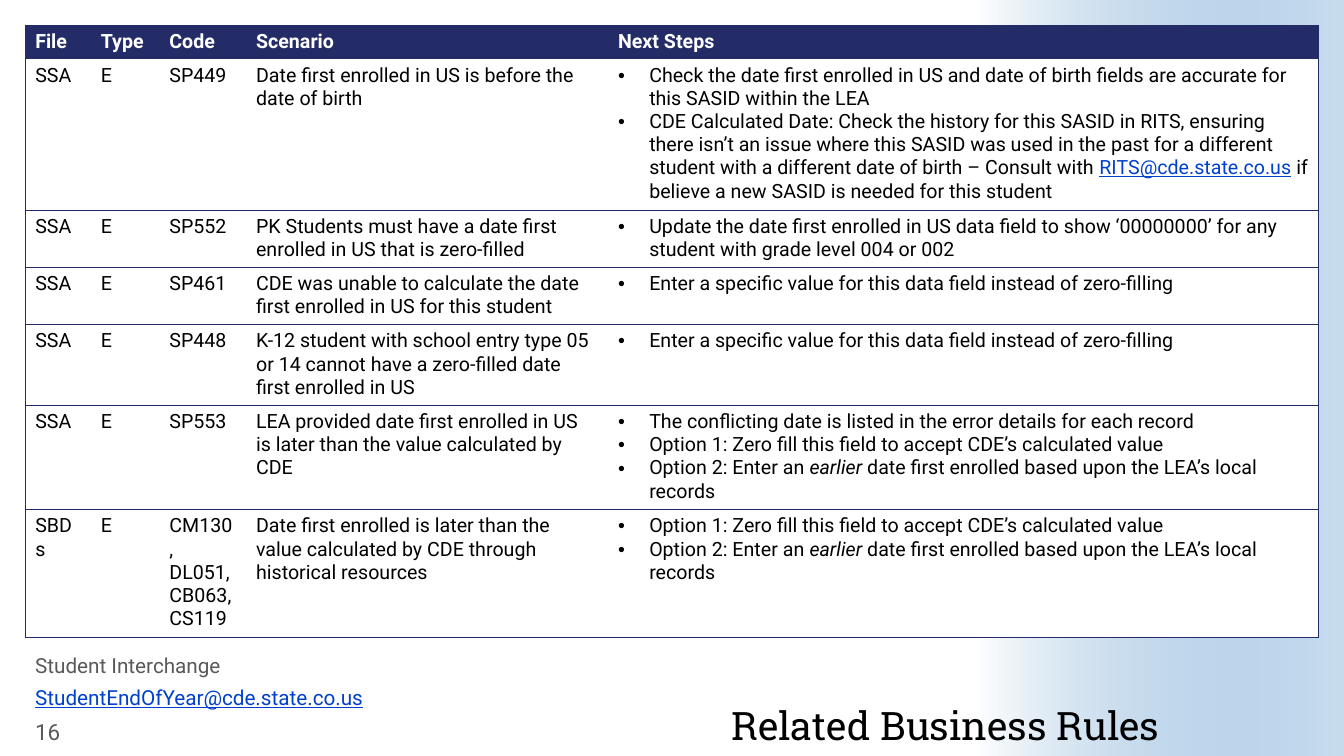
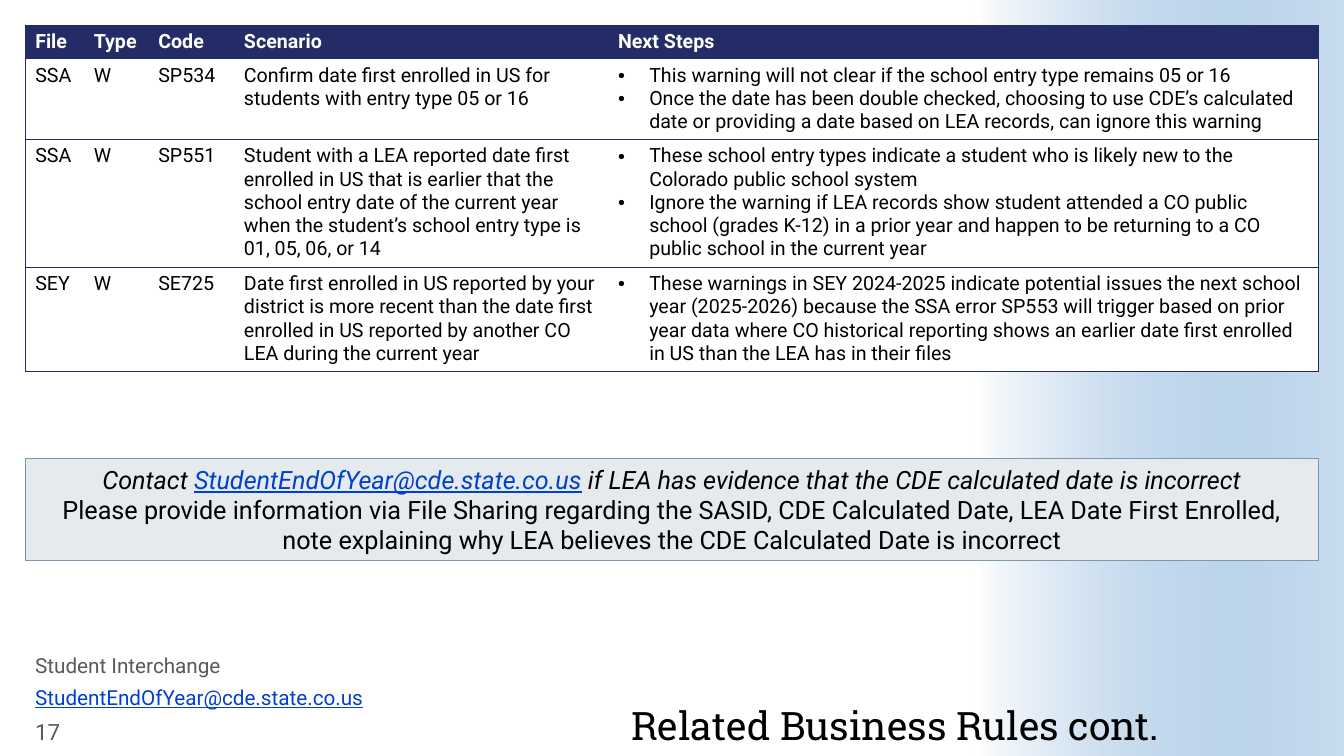
from lxml import etree
from pptx import Presentation
from pptx import util as u
from pptx.dml import color
from pptx.enum import shapes, text
from pptx.oxml import ns

GRID = 0.25
WIDTH, HEIGHT = 53.32, 30
MARGIN = 1
CONTENT = WIDTH - 2 * MARGIN
LINE, PADDING, HEADER = 0.92, 0.4, 1.32

NAVY, WHITE, BLACK, GREY = "232C67", "FFFFFF", "000000", "595959"
LINK_BLUE, BAND_BLUE = "0040CE", "488BC9"
CALLOUT_FILL, CALLOUT_LINE = "E5EAEE", "7C98AC"
LINK = {"hue": LINK_BLUE, "underline": True}
ITALIC = {"italic": True}
EMAIL = "StudentEndOfYear@cde.state.co.us"

HEADINGS = ["File", "Type", "Code", "Scenario", "Next Steps"]
SPECIFIC_VALUE = ["Enter a specific value for this data field instead of zero-filling"]
OPTIONS = [
    ["Option 1: Zero fill this field to accept CDE’s calculated value"],
    ["Option 2: Enter an ", ("earlier", ITALIC),
     " date first enrolled based upon the LEA’s local records"],
]
ERRORS = [
    (6, "SSA", "E", "SP449", "Date first enrolled in US is before the date of birth", [
        ["Check the date first enrolled in US and date of birth fields are accurate "
         "for this SASID within the LEA"],
        ["CDE Calculated Date: Check the history for this SASID in RITS, ensuring there "
         "isn’t an issue where this SASID was used in the past for a different student "
         "with a different date of birth – Consult with ",
         ("RITS@cde.state.co.us", LINK),
         " if believe a new SASID is needed for this student"]]),
    (2, "SSA", "E", "SP552",
     "PK Students must have a date first enrolled in US that is zero-filled", [
         ["Update the date first enrolled in US data field to show ‘00000000’ for any "
          "student with grade level 004 or 002"]]),
    (2, "SSA", "E", "SP461",
     "CDE was unable to calculate the date first enrolled in US for this student",
     [SPECIFIC_VALUE]),
    (3, "SSA", "E", "SP448",
     "K-12 student with school entry type 05 or 14 cannot have a zero-filled date first "
     "enrolled in US", [SPECIFIC_VALUE]),
    (4, "SSA", "E", "SP553",
     "LEA provided date first enrolled in US is later than the value calculated by CDE",
     [["The conflicting date is listed in the error details for each record"], *OPTIONS]),
    (4, "SBDs", "E", "CM130, DL051, CB063, CS119",
     "Date first enrolled is later than the value calculated by CDE through historical "
     "resources", OPTIONS),
]
WARNINGS = [
    (3, "SSA", "W", "SP534",
     "Confirm date first enrolled in US for students with entry type 05 or 16", [
         ["This warning will not clear if the school entry type remains 05 or 16"],
         ["Once the date has been double checked, choosing to use CDE’s calculated date "
          "or providing a date based on LEA records, can ignore this warning"]]),
    (5, "SSA", "W", "SP551",
     "Student with a LEA reported date first enrolled in US that is earlier that the "
     "school entry date of the current year when the student’s school entry type is 01, "
     "05, 06, or 14", [
         ["These school entry types indicate a student who is likely new to the Colorado "
          "public school system"],
         ["Ignore the warning if LEA records show student attended a CO public school "
          "(grades K-12) in a prior year and happen to be returning to a CO public school "
          "in the current year"]]),
    (4, "SEY", "W", "SE725",
     "Date first enrolled in US reported by your district is more recent than the date "
     "first enrolled in US reported by another CO LEA during the current year", [
         ["These warnings in SEY 2024-2025 indicate potential issues the next school year "
          "(2025-2026) because the SSA error SP553 will trigger based on prior year data "
          "where CO historical reporting shows an earlier date first enrolled in US than "
          "the LEA has in their files"]]),
]
CALLOUT = [
    [("Contact ", ITALIC), (EMAIL, {**LINK, **ITALIC}),
     (" if LEA has evidence that the CDE calculated date is incorrect", ITALIC)],
    ["Please provide information via File Sharing regarding the SASID, CDE Calculated "
     "Date, LEA Date First Enrolled, note explaining why LEA believes the CDE Calculated "
     "Date is incorrect"],
]


def rgb(value):
    """Turn a hex string into a colour."""
    return color.RGBColor.from_string(value)


def grid(*cells):
    """Turn grid cells into lengths."""
    return [u.Inches(cell * GRID) for cell in cells]


def add_runs(paragraph, items, size, hue=BLACK, font="Roboto", bold=False):
    """Add plain strings or (text, style) pairs as runs."""
    for item in items:
        words, style = (item, {}) if isinstance(item, str) else item
        run = paragraph.add_run()
        run.text = words
        run.font.name, run.font.size, run.font.bold = font, u.Pt(size), bold
        run.font.italic = style.get("italic", False)
        run.font.underline = style.get("underline", False)
        run.font.color.rgb = rgb(style.get("hue", hue))


def add_paragraphs(frame, paragraphs, size, bullet=False, align=None, spacing=None, **style):
    """Fill a text frame with paragraphs."""
    for index, items in enumerate(paragraphs):
        paragraph = frame.add_paragraph() if index else frame.paragraphs[0]
        paragraph.alignment, paragraph.line_spacing = align, spacing
        if bullet:
            properties = paragraph._p.get_or_add_pPr()
            indent = u.Inches(0.31)
            properties.set("marL", str(indent))
            properties.set("indent", str(-indent))
            etree.SubElement(properties, ns.qn("a:buFont"), typeface="Arial")
            etree.SubElement(properties, ns.qn("a:buChar"), char="•")
        add_runs(paragraph, items, size, **style)


def add_label(slide, place, items, size, anchor=text.MSO_ANCHOR.TOP, inset=None, **style):
    """Add a one-paragraph text box."""
    frame = slide.shapes.add_textbox(*grid(*place)).text_frame
    frame.word_wrap, frame.vertical_anchor = True, anchor
    if inset is not None:
        frame.margin_left = frame.margin_right = inset
        frame.margin_top = frame.margin_bottom = inset
    add_paragraphs(frame, [items], size, **style)


def add_rectangle(slide, *place):
    """Add a rectangle without shadow."""
    shape = slide.shapes.add_shape(shapes.MSO_SHAPE.RECTANGLE, *grid(*place))
    shape.shadow.inherit = False
    return shape


def add_side_band(slide):
    """Add the fading blue band at the right."""
    left = 38.68
    band = add_rectangle(slide, left, 0, WIDTH - left, HEIGHT)
    band.line.fill.background()
    band.fill.gradient()
    band.fill.gradient_angle = 0
    stops = band.fill.gradient_stops
    for stop, position, hue in zip(stops, (0, 1), (WHITE, BAND_BLUE)):
        stop.position, stop.color.rgb = position, rgb(hue)
    end = band.fill._fill._gradFill.findall(".//" + ns.qn("a:srgbClr"))[-1]
    etree.SubElement(end, ns.qn("a:alpha"), val="30000")


def set_borders(cell, sides):
    """Draw the named sides of a cell and clear the others."""
    properties = cell._tc.get_or_add_tcPr()
    for side in "LRTB":
        line = etree.SubElement(properties, ns.qn("a:ln" + side), w=str(u.Pt(1)))
        if side in sides:
            fill = etree.SubElement(line, ns.qn("a:solidFill"))
            etree.SubElement(fill, ns.qn("a:srgbClr"), val=NAVY)
        else:
            etree.SubElement(line, ns.qn("a:noFill"))


def add_rules_table(slide, columns, rules):
    """Add the table of business rules."""
    heights = [HEADER] + [PADDING + LINE * rule[0] for rule in rules]
    table = slide.shapes.add_table(
        len(heights), len(columns),
        *grid(MARGIN, MARGIN, CONTENT, sum(heights))).table
    table.first_row = table.horz_banding = False
    for column, width in zip(table.columns, grid(*columns)):
        column.width = width
    for row, height in zip(table.rows, grid(*heights)):
        row.height = height
    last = len(columns) - 1
    for row, values in enumerate([HEADINGS] + [rule[1:] for rule in rules]):
        for column, value in enumerate(values):
            cell = table.cell(row, column)
            set_borders(cell, "TB" + "L" * (column == 0) + "R" * (column == last))
            cell.fill.solid()
            cell.fill.fore_color.rgb = rgb(WHITE if row else NAVY)
            bullet = not isinstance(value, str)
            add_paragraphs(cell.text_frame, value if bullet else [[value]], 14, bullet,
                           hue=BLACK if row else WHITE, bold=not row)


def add_callout(slide):
    """Add the contact box."""
    box = add_rectangle(slide, MARGIN, 18.2, CONTENT, 4.04)
    box.fill.solid()
    box.fill.fore_color.rgb = rgb(CALLOUT_FILL)
    box.line.color.rgb = rgb(CALLOUT_LINE)
    box.line.width = u.Pt(0.5)
    box.text_frame.word_wrap = True
    add_paragraphs(box.text_frame, CALLOUT, 18, align=text.PP_ALIGN.CENTER)


def add_footer(slide, number):
    """Add the two contact lines and the page number."""
    for top, item in ((25.88, "Student Interchange"), (27.16, (EMAIL, LINK))):
        add_label(slide, (MARGIN, top, 15.56, 1.24), [item], 14.8, spacing=0.8, hue=GREY)
    add_label(slide, (MARGIN, 28.4, 3.4, 1.24), [str(number)], 16,
              anchor=text.MSO_ANCHOR.MIDDLE, hue=GREY)


def add_rules_slide(presentation, title, number, columns, rules):
    """Add a slide with band, title, table and footer."""
    slide = presentation.slides.add_slide(presentation.slide_layouts[6])
    add_side_band(slide)
    add_label(slide, (15.96, 25.8, 30.04, 3.92), [title], 28,
              anchor=text.MSO_ANCHOR.BOTTOM, inset=0, align=text.PP_ALIGN.RIGHT,
              spacing=0.9, font="Roboto Slab")
    add_rules_table(slide, columns, rules)
    add_footer(slide, number)
    return slide


def main():
    """Build and save the presentation."""
    presentation = Presentation()
    presentation.slide_width, presentation.slide_height = grid(WIDTH, HEIGHT)
    add_rules_slide(presentation, "Related Business Rules", 16,
                    (2.6, 2.72, 3.44, 14.36, 28.2), ERRORS)
    slide = add_rules_slide(presentation, "Related Business Rules cont.", 17,
                            (2.32, 2.56, 3.4, 14.84, 28.2), WARNINGS)
    add_callout(slide)
    presentation.save("out.pptx")


if __name__ == "__main__":
    main()
